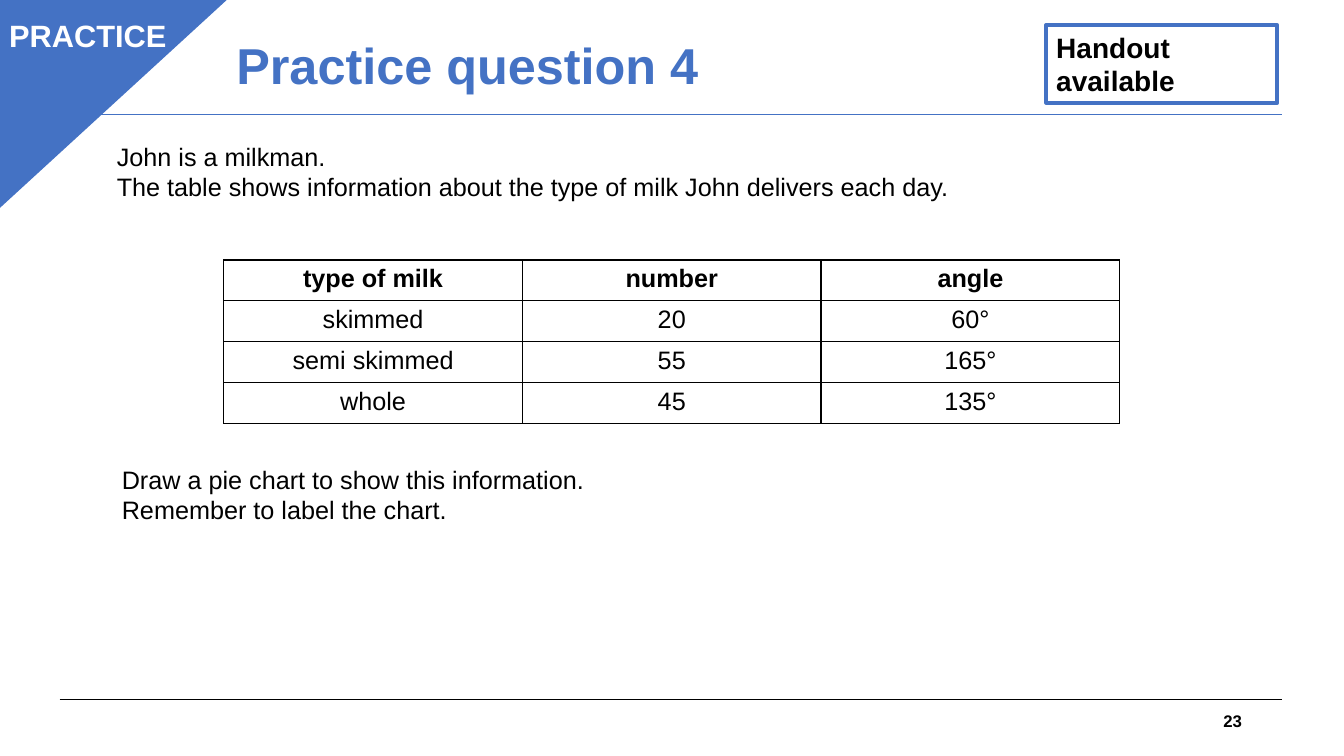
import dataclasses

import lxml.etree
import pptx
import pptx.dml.color
import pptx.enum.shapes
import pptx.enum.text
import pptx.oxml.ns
import pptx.util

SHAPE = pptx.enum.shapes.MSO_SHAPE
ALIGN = pptx.enum.text.PP_ALIGN
ANCHOR = pptx.enum.text.MSO_ANCHOR
FIT = pptx.enum.text.MSO_AUTO_SIZE

COLOURS = {"accent": "4472C4", "ink": "000000", "paper": "FFFFFF"}
FONT = "Arial"
WIDTH, HEIGHT = 13.33, 7.5
COLUMNS = ROWS = 100  # the grid that all lengths refer to

MILK_ROWS = [
    ("type of milk", "number", "angle"),
    ("skimmed", "20", "60°"),
    ("semi skimmed", "55", "165°"),
    ("whole", "45", "135°"),
]


@dataclasses.dataclass
class Box:
    """A rectangle in grid columns and rows."""
    left: float
    top: float
    width: float
    height: float

    def inner(self, left, top, width, height):
        return Box(self.left + left, self.top + top, width, height)

    def emu(self):
        across = pptx.util.Inches(WIDTH) / COLUMNS
        down = pptx.util.Inches(HEIGHT) / ROWS
        return [round(length) for length in (
            self.left * across, self.top * down,
            self.width * across, self.height * down)]


def colour(name):
    return pptx.dml.color.RGBColor.from_string(COLOURS[name])


def write(frame, text, size=18, ink="ink", bold=False, align=ALIGN.LEFT,
          anchor=ANCHOR.TOP, fit=FIT.NONE, wrap=True, spacing=None):
    """Fill a frame: one paragraph a line, with a vertical tab as line break."""
    frame.text = text
    frame.word_wrap = wrap
    frame.auto_size = fit
    frame.vertical_anchor = anchor
    for para in frame.paragraphs:
        para.alignment = align
        para.line_spacing = spacing
        for span in para.runs:
            span.font.name = FONT
            span.font.size = pptx.util.Pt(size)
            span.font.bold = bold
            span.font.color.rgb = colour(ink)


def add_text(page, box, text, **style):
    write(page.shapes.add_textbox(*box.emu()).text_frame, text, **style)


def add_rule(page, box, ink):
    """Draw a horizontal line along the top of the box."""
    left, top, width, _ = box.emu()
    rule = page.shapes.add_connector(
        pptx.enum.shapes.MSO_CONNECTOR.STRAIGHT, left, top, left + width, top)
    rule.line.color.rgb = colour(ink)
    rule.line.width = pptx.util.Pt(0.75)
    lxml.etree.SubElement(rule.element.spPr, pptx.oxml.ns.qn("a:effectLst"))


def add_outlined(page, kind, box, weight):
    shape = page.shapes.add_shape(kind, *box.emu())
    shape.shadow.inherit = False
    shape.line.color.rgb = colour("accent")
    shape.line.width = pptx.util.Pt(weight)
    return shape


def add_header(page, box):
    add_rule(page, box.inner(4.43, box.height, 90.97, 0), "accent")
    title = page.shapes.title
    title.left, title.top, title.width, title.height = box.inner(
        -0.22, 1.6, 70, 14.8).emu()
    write(title.text_frame, "Practice question 4", size=36, ink="accent",
          bold=True, align=ALIGN.CENTER, anchor=ANCHOR.MIDDLE, spacing=0.9)


def add_corner(page, box):
    corner = add_outlined(page, SHAPE.ISOSCELES_TRIANGLE, box, 1)
    corner.adjustments[0] = 0
    corner.element.spPr.xfrm.set("flipV", "1")
    corner.fill.solid()
    corner.fill.fore_color.rgb = colour("accent")
    add_text(page, box.inner(0, 1.87, 13.5, 6.27), "PRACTICE", size=22,
             ink="paper", bold=True, align=ALIGN.CENTER)


def add_handout_badge(page, box):
    badge = add_outlined(page, SHAPE.RECTANGLE, box, 3)
    badge.fill.background()
    write(badge.text_frame, "Handout\vavailable", size=20, bold=True,
          fit=FIT.SHAPE_TO_FIT_TEXT)


def border_cell(cell):
    properties = cell._tc.get_or_add_tcPr()
    for position, side in enumerate(("a:lnL", "a:lnR", "a:lnT", "a:lnB")):
        edge = lxml.etree.Element(pptx.oxml.ns.qn(side), w=str(pptx.util.Pt(1)))
        fill = lxml.etree.SubElement(edge, pptx.oxml.ns.qn("a:solidFill"))
        lxml.etree.SubElement(fill, pptx.oxml.ns.qn("a:srgbClr"),
                              val=COLOURS["ink"])
        properties.insert(position, edge)


def add_milk_table(page, box):
    left, top, width, height = box.emu()
    count = len(MILK_ROWS[0])
    table = page.shapes.add_table(
        len(MILK_ROWS), count, left, top, width, height).table
    table.horz_banding = False
    for column in table.columns:
        column.width = width // count
    for number, texts in enumerate(MILK_ROWS):
        table.rows[number].height = height // len(MILK_ROWS)
        for cell, text in zip(table.rows[number].cells, texts):
            write(cell.text_frame, text, bold=number == 0, align=ALIGN.CENTER)
            cell.fill.solid()
            cell.fill.fore_color.rgb = colour("paper")
            border_cell(cell)


def add_question(page, box):
    add_text(page, box.inner(0, 0, 64, 9.47),
             "John is a milkman.\nThe table shows information about the type "
             "of milk John delivers each day.",
             wrap=False, fit=FIT.SHAPE_TO_FIT_TEXT)
    add_milk_table(page, box.inner(8.7, 16.4, 66.67, 21.6))
    add_text(page, box.inner(0.38, 42.8, 66.5, 9.47),
             "Draw a pie chart to show this information.\n"
             "Remember to label the chart.", fit=FIT.SHAPE_TO_FIT_TEXT)


def add_footer(page, box):
    add_rule(page, box, "ink")
    add_text(page, box.inner(66.22, 0.14, 22.5, 5.33), "23", size=12,
             bold=True, align=ALIGN.RIGHT, anchor=ANCHOR.MIDDLE)


def main():
    deck = pptx.Presentation()
    deck.slide_width = pptx.util.Inches(WIDTH)
    deck.slide_height = pptx.util.Inches(HEIGHT)
    page = deck.slides.add_slide(deck.slide_layouts.get_by_name("Title Only"))
    add_header(page, Box(0, 0, COLUMNS, 15.2))
    add_corner(page, Box(-0.22, -0.27, 17.18, 28))
    add_handout_badge(page, Box(77.85, 3.33, 17.18, 10.27))
    add_question(page, Box(7.95, 18, 80, 55))
    add_footer(page, Box(4.43, 92.53, 90.97, 7.47))
    deck.save("out.pptx")


if __name__ == "__main__":
    main()
